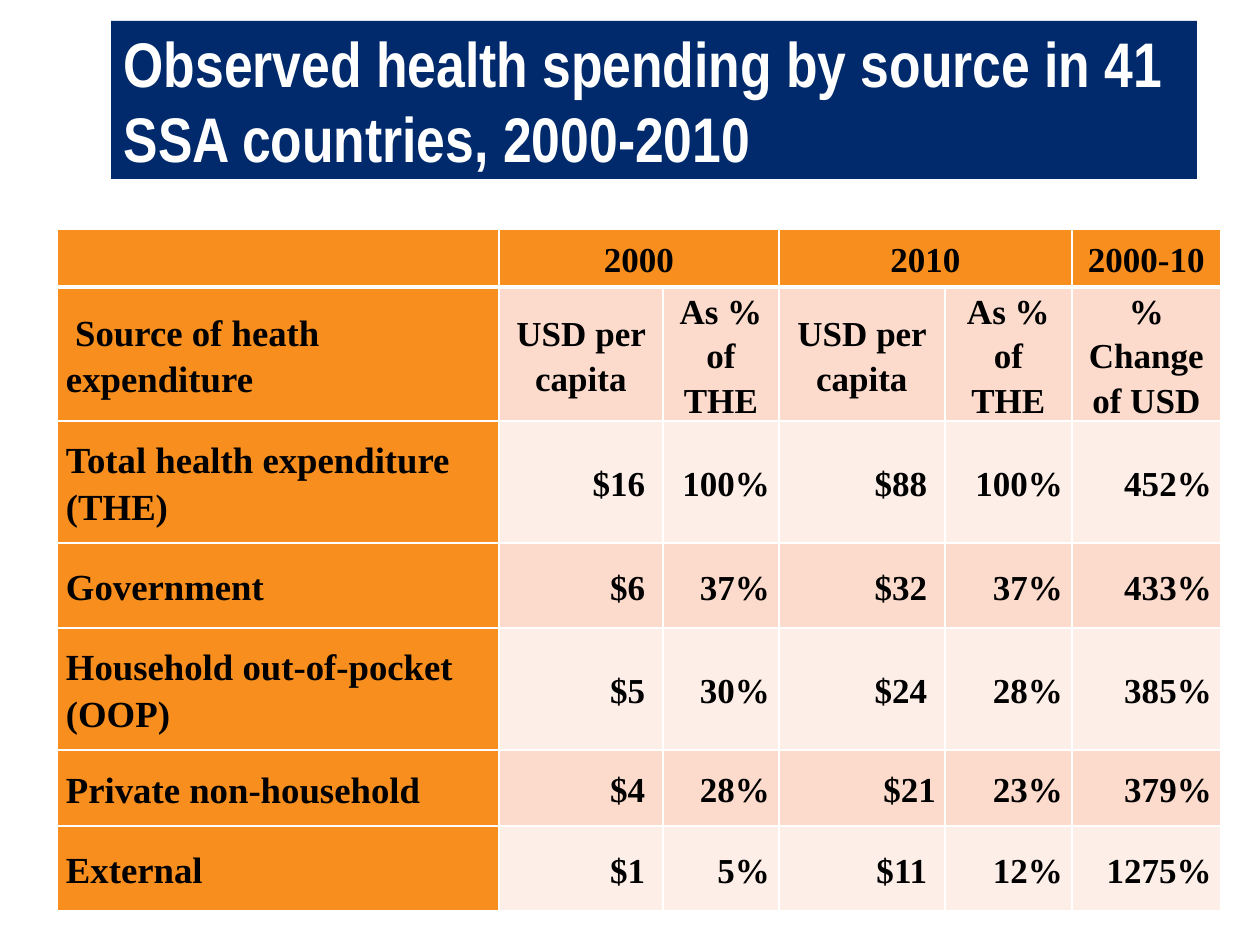
from dataclasses import dataclass

from lxml.etree import SubElement
from pptx import Presentation
from pptx.dml.color import RGBColor
from pptx.enum.text import MSO_ANCHOR, MSO_AUTO_SIZE, PP_ALIGN
from pptx.oxml.ns import qn
from pptx.table import _Cell
from pptx.util import Emu, Pt

PX = 914400 // 126
COLORS = {"navy": "002A6C", "orange": "F78E1E", "pink": "FCDBCD",
          "pale": "FDEEE8", "white": "FFFFFF", "black": "000000"}
COLUMN_WIDTHS = [442, 164, 116, 166, 127, 149]
ROW_HEIGHTS = [58, 110, 122, 85, 122, 76, 85]
ROWS = [
    ["", "2000", "", "2010", "", "2000-10"],
    [" Source of heath expenditure", "USD per capita", "As % of THE",
     "USD per capita", "As % of THE", "% Change of USD"],
    ["Total health expenditure (THE)", "$16 ", "100%", "$88 ", "100%", "452%"],
    ["Government", "$6 ", "37%", "$32 ", "37%", "433%"],
    ["Household out-of-pocket (OOP)", "$5 ", "30%", "$24 ", "28%", "385%"],
    ["Private non-household", "$4 ", "28%", "$21", "23%", "379%"],
    ["External", "$1 ", "5%", "$11 ", "12%", "1275%"],
]


@dataclass
class CellStyle:
    fill: str
    align: PP_ALIGN
    size: int
    anchor: MSO_ANCHOR
    top_line: int
    bottom_line: int


def px(length: int) -> Emu:
    return Emu(length * PX)


def color(name: str) -> RGBColor:
    return RGBColor.from_string(COLORS[name])


def style_for(row: int, column: int) -> CellStyle:
    """Header row and first column are orange; body rows are banded."""
    label = column == 0
    band = "pink" if row % 2 else "pale"
    return CellStyle(
        fill="orange" if row == 0 or label else band,
        align=(PP_ALIGN.LEFT if label
               else PP_ALIGN.CENTER if row < 2 else PP_ALIGN.RIGHT),
        size=21 if label else 20,
        anchor=MSO_ANCHOR.BOTTOM if (row, column) == (1, 5) else MSO_ANCHOR.MIDDLE,
        top_line=3 if row == 1 else 1,
        bottom_line=3 if row == 0 else 1,
    )


def add_borders(cell: _Cell, style: CellStyle) -> None:
    properties = cell._tc.get_or_add_tcPr()
    widths = {"a:lnL": 1, "a:lnR": 1, "a:lnT": style.top_line, "a:lnB": style.bottom_line}
    for tag, width in widths.items():
        line = SubElement(properties, qn(tag), w=str(Pt(width)))
        fill = SubElement(line, qn("a:solidFill"))
        SubElement(fill, qn("a:srgbClr"), val=COLORS["white"])


def fill_cell(cell: _Cell, text: str, style: CellStyle) -> None:
    add_borders(cell, style)
    cell.fill.solid()
    cell.fill.fore_color.rgb = color(style.fill)
    cell.vertical_anchor = style.anchor
    cell.margin_left = cell.margin_right = px(9)
    cell.margin_top = cell.margin_bottom = 0
    cell.text = text
    para = cell.text_frame.paragraphs[0]
    para.alignment = style.align
    para.line_spacing = 1.15
    para.font.name = "Times New Roman"
    para.font.size = Pt(style.size)
    para.font.bold = True
    para.font.color.rgb = color("black")


def main() -> None:
    deck = Presentation()
    deck.slide_width, deck.slide_height = px(1260), px(945)
    page = deck.slides.add_slide(deck.slide_layouts[5])

    # Title band
    title = page.shapes.title
    title.left, title.top, title.width, title.height = px(111), px(21), px(1086), px(158)
    title.fill.solid()
    title.fill.fore_color.rgb = color("navy")
    frame = title.text_frame
    frame.text = "Observed health spending by source in 41 SSA countries, 2000-2010"
    frame.word_wrap = True
    frame.auto_size = MSO_AUTO_SIZE.NONE
    frame.vertical_anchor = MSO_ANCHOR.MIDDLE
    para = frame.paragraphs[0]
    para.alignment = PP_ALIGN.LEFT
    para.font.name = "Arial Narrow"
    para.font.size = Pt(36)
    para.font.bold = True
    para.font.color.rgb = color("white")

    # Spending table
    table = page.shapes.add_table(
        len(ROWS), len(COLUMN_WIDTHS), px(57), px(229),
        px(sum(COLUMN_WIDTHS)), px(sum(ROW_HEIGHTS))).table
    for column, width in zip(table.columns, COLUMN_WIDTHS):
        column.width = px(width)
    for row, height in zip(table.rows, ROW_HEIGHTS):
        row.height = px(height)
    for row, texts in enumerate(ROWS):
        for column, text in enumerate(texts):
            fill_cell(table.cell(row, column), text, style_for(row, column))

    # Each year spans its two measures
    for column in (1, 3):
        table.cell(0, column).merge(table.cell(0, column + 1))

    deck.save("out.pptx")


if __name__ == "__main__":
    main()
